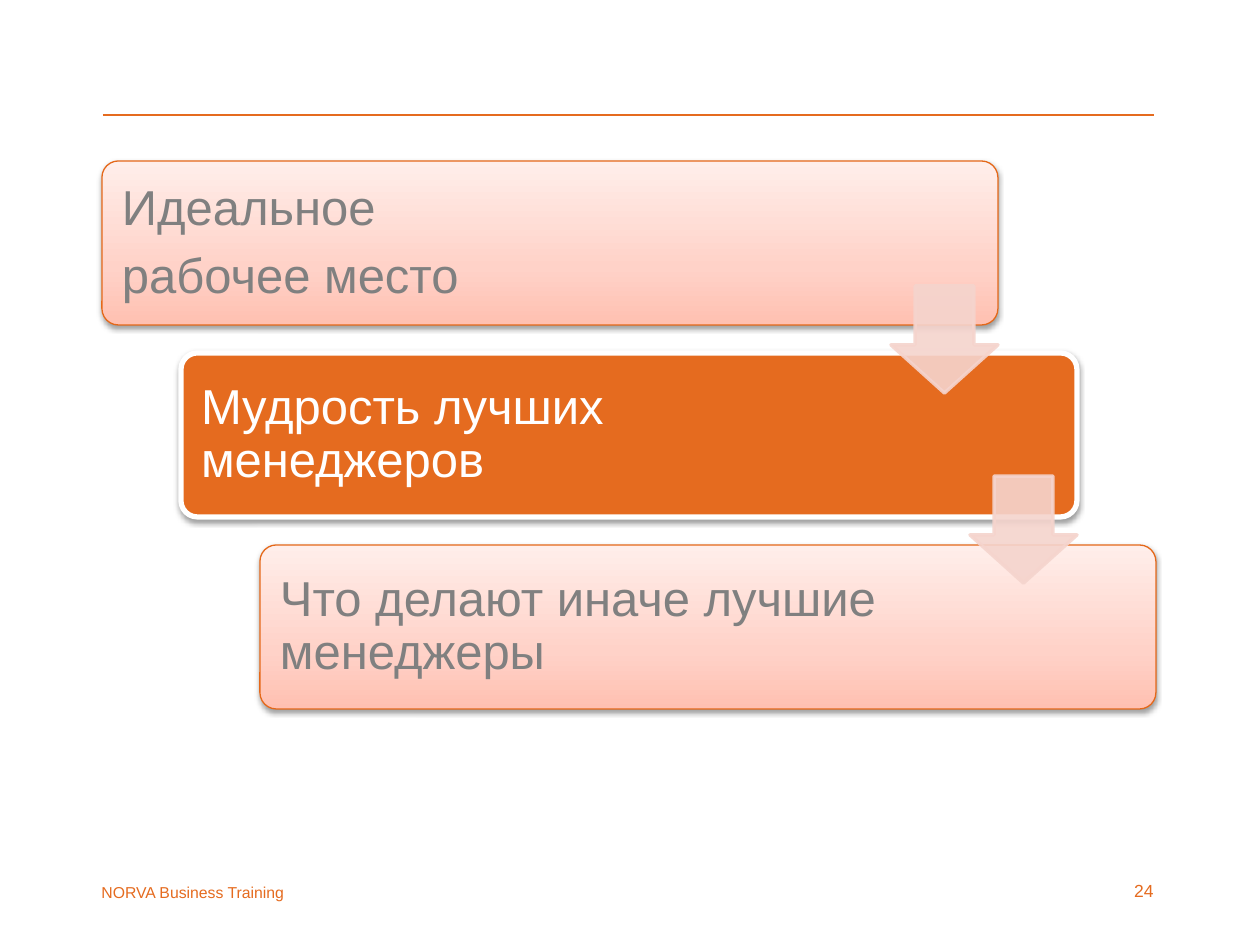
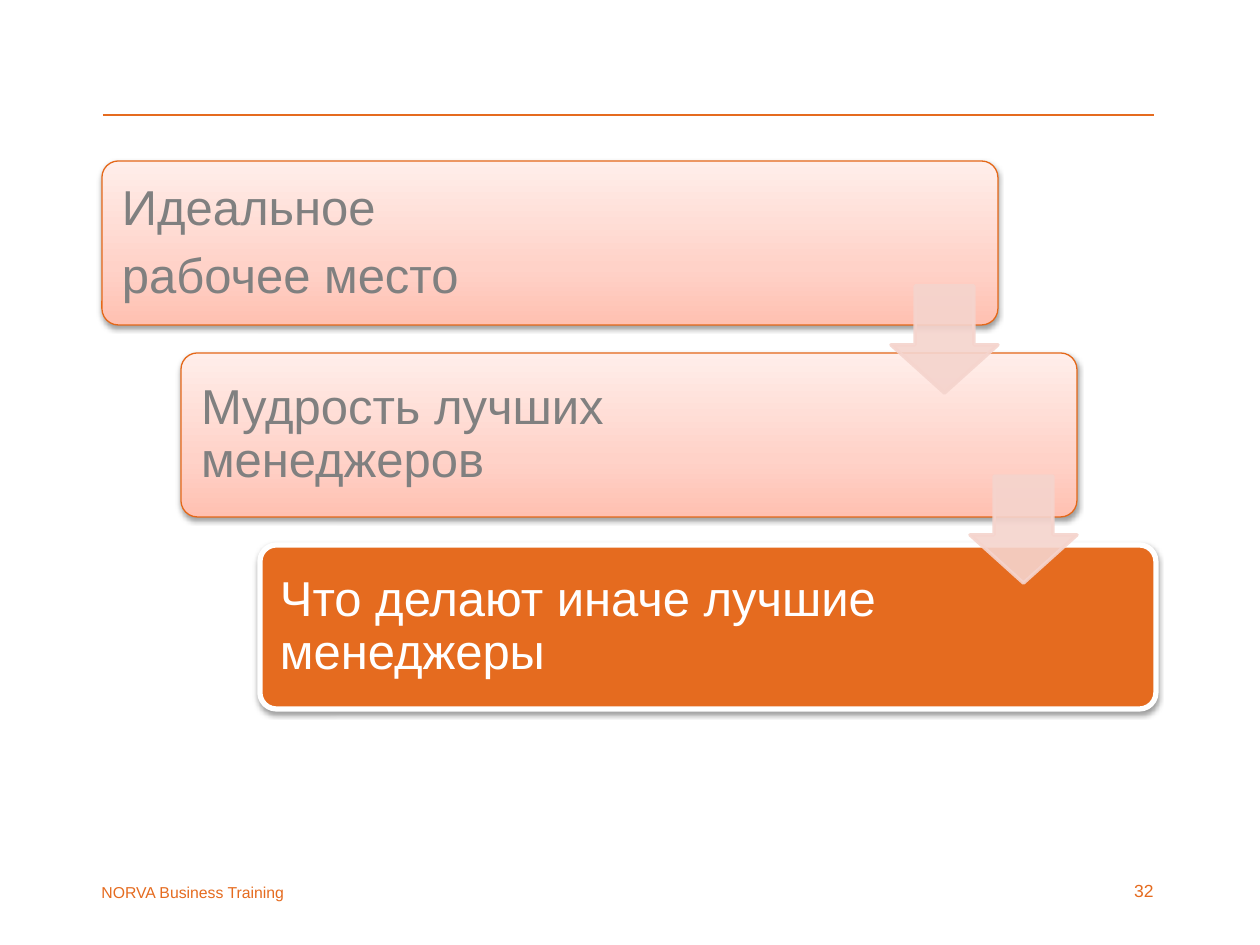
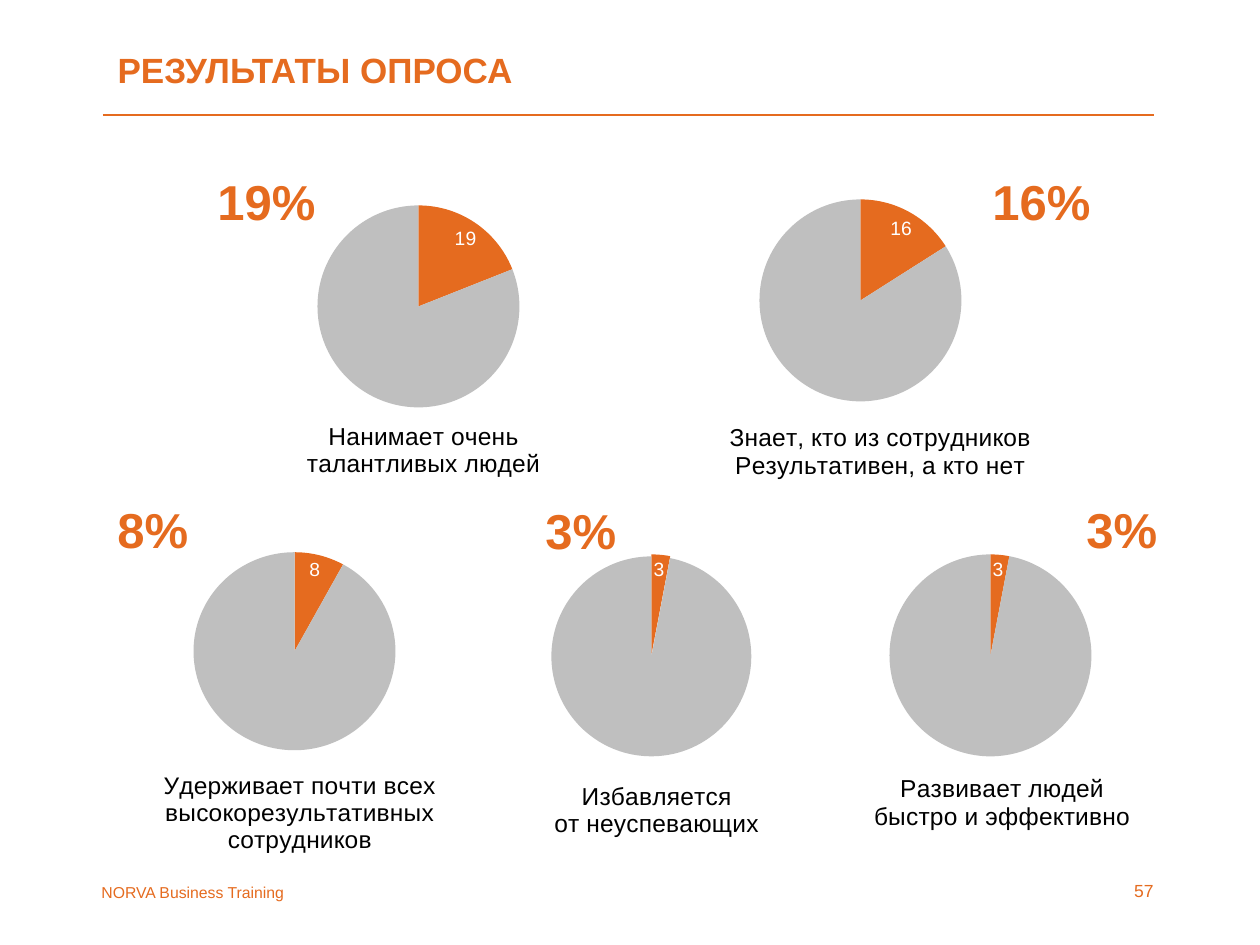
from lxml import etree
from pptx import Presentation
from pptx import util as u
from pptx.chart import data as chart_data
from pptx.dml import color
from pptx.enum import chart as chart_enum, shapes, text
from pptx.oxml.ns import qn

SCALE = 914400 / 126  # EMU in one px

THEME = {
    "orange": "E56B1F", "edge": "E56819", "white": "FFFFFF", "black": "000000",
    "grey": "808080", "pie_rest": "BFBFBF", "arrow": "F5D4CD",
    "gradient": [(0, "FFC0B1"), (35000, "FFD2C8"), (100000, "FFEEEA")],
    "font": "Arial",
    "title": 20, "step": 28, "percent": 28, "caption": 14, "label": 11,
    "number": 10, "footer": 9,
}


def px(*lengths):
    return [round(length * SCALE) for length in lengths]


def write_text(frame, words, size, colour, bold=False, frame_format=None, paragraph_format=None):
    frame.text = words
    for name, value in (frame_format or {}).items():
        setattr(frame, name, value)
    for paragraph in frame.paragraphs:
        for name, value in (paragraph_format or {}).items():
            setattr(paragraph, name, value)
        for run in paragraph.runs:
            font_format = {"name": THEME["font"], "size": u.Pt(THEME[size]), "bold": bold}
            for name, value in font_format.items():
                setattr(run.font, name, value)
            run.font.color.rgb = color.RGBColor.from_string(THEME[colour])


presentation = Presentation()
presentation.slide_width, presentation.slide_height = px(1260, 945)
TITLE_ONLY, BLANK = presentation.slide_layouts[5], presentation.slide_layouts[6]
GROW = {"word_wrap": True, "auto_size": text.MSO_AUTO_SIZE.SHAPE_TO_FIT_TEXT}

# Slides with the shared rule, page number and footer
slides = []
for layout, number in [(BLANK, "24"), (BLANK, "32"), (TITLE_ONLY, "57")]:
    slide = presentation.slides.add_slide(layout)
    slides.append(slide)
    rule = slide.shapes.add_connector(shapes.MSO_CONNECTOR.STRAIGHT, *px(103, 115, 1154, 115))
    rule.line.color.rgb = color.RGBColor.from_string(THEME["orange"])
    rule.line.width = u.Pt(1)
    etree.SubElement(rule.element.spPr, qn("a:effectLst"))
    page_number = slide.shapes.add_textbox(*px(1103, 874, 63, 34))
    write_text(page_number.text_frame, number, "number", "orange", frame_format=GROW,
               paragraph_format={"alignment": text.PP_ALIGN.RIGHT})
    footer = slide.shapes.add_textbox(*px(89, 877, 256, 32))
    write_text(footer.text_frame, "NORVA Business Training", "footer", "orange", frame_format=GROW)

# Slides 1 and 2: staircase of three steps, one of them highlighted
STEPS = ["Идеальное\nрабочее место", "Мудрость лучших менеджеров",
         "Что делают иначе лучшие менеджеры"]
STEP_FRAME = {"word_wrap": True, "vertical_anchor": text.MSO_ANCHOR.MIDDLE}
STEP_FRAME.update({f"margin_{side}": px(15)[0] for side in ("left", "top", "right", "bottom")})
STEP_PARAGRAPH = {"line_spacing": 0.9, "space_after": u.Pt(9)}

for slide, active in zip(slides, (1, 2)):
    for index, words in enumerate(STEPS):
        left, top = 102 + 79 * index, 161 + 192 * index
        highlighted = index == active
        step = slide.shapes.add_shape(shapes.MSO_SHAPE.ROUNDED_RECTANGLE, *px(left, top, 896, 164))
        step.adjustments[0] = 0.1
        step.line.color.rgb = color.RGBColor.from_string(THEME["white" if highlighted else "edge"])
        step.line.width = u.Pt(3 if highlighted else 0.75)
        if highlighted:
            step.fill.solid()
            step.fill.fore_color.rgb = color.RGBColor.from_string(THEME["orange"])
        else:
            gradient = etree.Element(qn("a:gradFill"), rotWithShape="1")
            stops = etree.SubElement(gradient, qn("a:gsLst"))
            for position, value in THEME["gradient"]:
                stop = etree.SubElement(stops, qn("a:gs"), pos=str(position))
                etree.SubElement(stop, qn("a:srgbClr"), val=value)
            etree.SubElement(gradient, qn("a:lin"), ang="16200000", scaled="0")
            step.element.spPr.find(qn("a:prstGeom")).addnext(gradient)
        effects = etree.SubElement(step.element.spPr, qn("a:effectLst"))
        shadow = etree.SubElement(effects, qn("a:outerShdw"), blurRad=str(u.Pt(3.1)),
                                  dist=str(u.Pt(1.6)), dir="5400000", rotWithShape="0")
        shadow_colour = etree.SubElement(shadow, qn("a:srgbClr"), val=THEME["black"])
        etree.SubElement(shadow_colour, qn("a:alpha"), val="38000")

        step_text = slide.shapes.add_textbox(*px(left + 5, top + 5, 701, 155))
        write_text(step_text.text_frame, words, "step", "white" if highlighted else "grey",
                   frame_format=STEP_FRAME, paragraph_format=STEP_PARAGRAPH)

    # Translucent arrows between the steps
    for index in range(len(STEPS) - 1):
        arrow = slide.shapes.add_shape(shapes.MSO_SHAPE.DOWN_ARROW,
                                       *px(891 + 79 * index, 286 + 190 * index, 107, 107))
        arrow.adjustments[0], arrow.adjustments[1] = 0.55, 0.45
        arrow.shadow.inherit = False
        arrow.fill.solid()
        arrow.line.width = u.Pt(2)
        for paint in (arrow.fill.fore_color, arrow.line.color):
            paint.rgb = color.RGBColor.from_string(THEME["arrow"])
        for paint in arrow.element.spPr.iter(qn("a:srgbClr")):
            etree.SubElement(paint, qn("a:alpha"), val="90000")

# Slide 3: title
slide = slides[2]
title = slide.shapes.title
title.left, title.top, title.width, title.height = px(105, 24, 1126, 91)
write_text(title.text_frame, "РЕЗУЛЬТАТЫ ОПРОСА", "title", "orange", bold=True,
           frame_format={"vertical_anchor": text.MSO_ANCHOR.MIDDLE, "word_wrap": True},
           paragraph_format={"alignment": text.PP_ALIGN.LEFT})

# Slide 3: share, caption, percent box, chart corner, caption place, explosion
PIES = [
    (19, "Нанимает очень\nталантливых людей", (205, 165, 159), (178, 145), (0.26, 0.74), 0),
    (3, "Развивает людей\nбыстро и эффективно", (1074, 493, 118), (750, 494), (0.25, 0.75), 0),
    (8, "Удерживает почти всех\nвысокорезультативных сотрудников", (105, 493, 118), (54, 493),
     (0.22, 0.76), 0),
    (3, "Избавляется\nот неуспевающих", (533, 494, 118), (411, 494), (0.29, 0.77), 1),
    (16, "Знает, кто из сотрудников\nРезультативен, а кто нет", (980, 165, 149), (620, 139),
     (0.22, 0.76), 0),
]
PLOT_PLACE = {"x": 0.29, "y": 0.16, "w": 0.42, "h": 0.56}

for share, caption, percent_box, corner, (caption_x, caption_y), explosion in PIES:
    percent = slide.shapes.add_textbox(*px(*percent_box, 72))
    write_text(percent.text_frame, f"{share}%", "percent", "orange", bold=True, frame_format=GROW)

    values = chart_data.CategoryChartData()
    values.categories = ["1", "2", "3", "4"]
    values.add_series("Series 1", [share, 100 - share, None, None])
    chart = slide.shapes.add_chart(chart_enum.XL_CHART_TYPE.PIE, *px(*corner, 481, 367),
                                   values).chart
    chart.has_legend = False
    chart.font.name, chart.font.size = THEME["font"], u.Pt(18)
    chart.font.color.rgb = color.RGBColor.from_string(THEME["black"])
    chart.has_title = True
    write_text(chart.chart_title.text_frame, caption, "caption", "black")

    # Slices and the label of the share
    plot = chart.plots[0]
    plot.vary_by_categories = True
    series = plot.series[0]
    for index, name in enumerate(["orange", "pie_rest", "orange", "orange"]):
        slice_format = series.points[index].format
        slice_format.fill.solid()
        slice_format.fill.fore_color.rgb = color.RGBColor.from_string(THEME[name])
        slice_format.line.fill.background()
    label = series.points[0].data_label
    write_text(label.text_frame, str(share), "label", "white")
    label.position = chart_enum.XL_LABEL_POSITION.BEST_FIT
    series.data_labels.show_value = False
    if explosion:
        explosion_mark = etree.Element(qn("c:explosion"), val=str(explosion))
        chart.element.find(".//" + qn("c:dPt")).addprevious(explosion_mark)

    # Clear background, so that neighbouring charts may overlap
    background = etree.Element(qn("c:spPr"))
    etree.SubElement(background, qn("a:noFill"))
    etree.SubElement(etree.SubElement(background, qn("a:ln")), qn("a:noFill"))
    chart.element.find(qn("c:chart")).addnext(background)

    # Places of the pie and of its caption below
    for tag, place in [("c:plotArea", PLOT_PLACE), ("c:title", {"x": caption_x, "y": caption_y})]:
        parent = chart.element.find(".//" + qn(tag))
        for old_layout in parent.findall(qn("c:layout")):
            parent.remove(old_layout)
        layout = etree.Element(qn("c:layout"))
        manual = etree.SubElement(layout, qn("c:manualLayout"))
        settings = {"layoutTarget": "inner"} if tag == "c:plotArea" else {}
        settings.update({"xMode": "edge", "yMode": "edge"}, **place)
        for name, value in settings.items():
            etree.SubElement(manual, qn("c:" + name), val=str(value))
        parent.insert(0 if tag == "c:plotArea" else 1, layout)

presentation.save("out.pptx")
